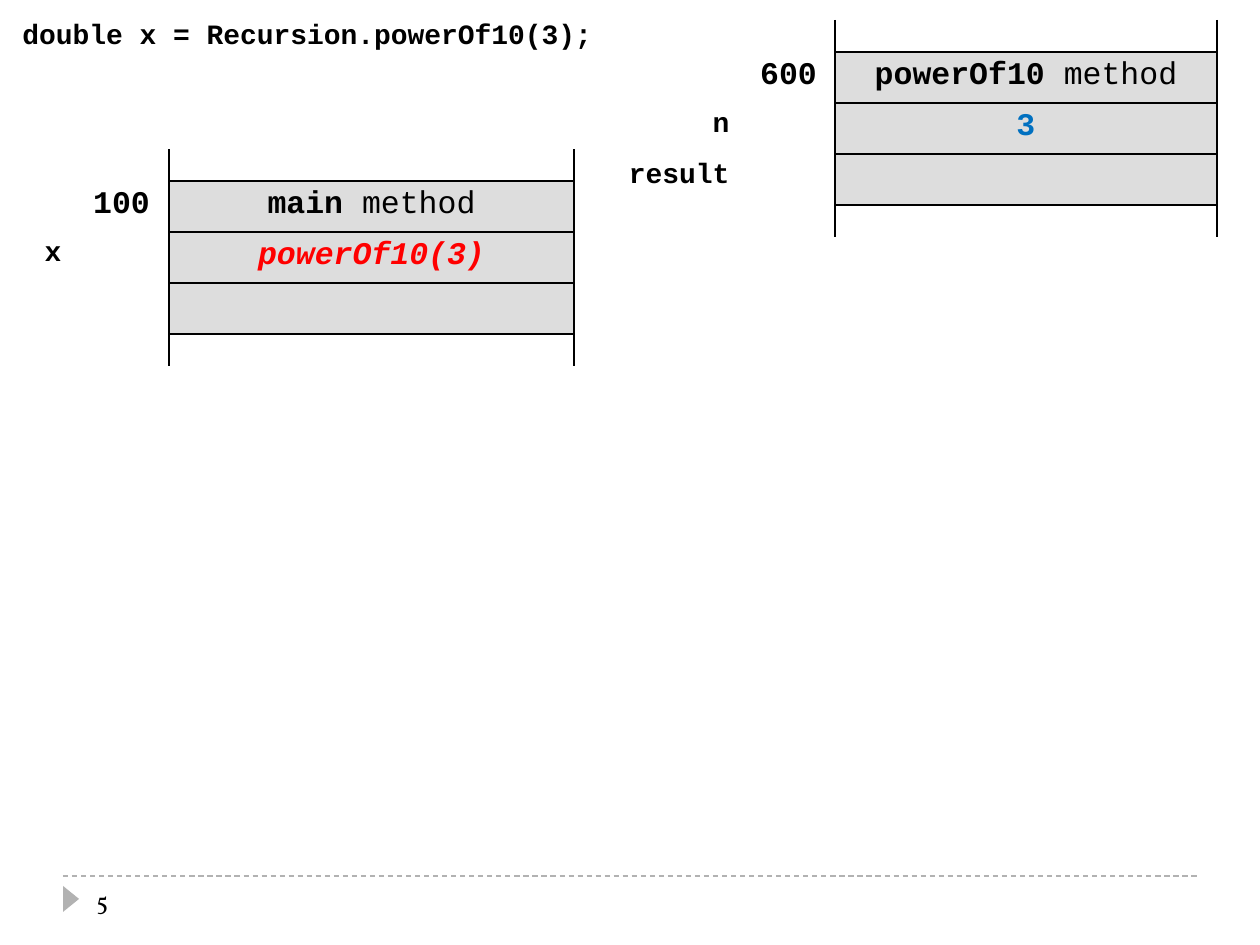
import pptx
import pptx.dml.color
import pptx.enum.dml
import pptx.enum.shapes
import pptx.enum.text
import pptx.oxml
import pptx.util
from pptx.oxml.ns import nsdecls, qn

RGBColor = pptx.dml.color.RGBColor
BLACK = RGBColor(0x00, 0x00, 0x00)
GRAY = RGBColor(0xB2, 0xB2, 0xB2)
FRAME_FILL = RGBColor(0xDD, 0xDD, 0xDD)
BLUE = RGBColor(0x00, 0x70, 0xC0)
RED = RGBColor(0xFF, 0x00, 0x00)
CODE_FONT = "Courier New"
NUMBER_FONT = "Vollkorn"
NO_GRID_STYLE = "{2D5ABB26-0587-4C30-8999-92F81FD0307C}"
PX = 914400 // 126
CENTER = pptx.enum.text.PP_ALIGN.CENTER
RIGHT = pptx.enum.text.PP_ALIGN.RIGHT


class SlideBuilder:
    """Draws styled elements on the current slide, with lengths in px."""

    def __init__(self, slide):
        self.slide = slide

    def box(self, left, top, width, height):
        return [length * PX for length in (left, top, width, height)]

    def style(self, paragraph, size, font=CODE_FONT, color=BLACK, bold=True, italic=False):
        paragraph.font.size = pptx.util.Pt(size)
        paragraph.font.name = font
        paragraph.font.color.rgb = color
        paragraph.font.bold = bold
        paragraph.font.italic = italic

    def text(self, content, place, size, wrap=True, **look):
        frame = self.slide.shapes.add_textbox(*self.box(*place)).text_frame
        frame.word_wrap = wrap
        frame.vertical_anchor = pptx.enum.text.MSO_ANCHOR.MIDDLE
        frame.text = content
        self.style(frame.paragraphs[0], size, **look)

    def dashed_rule(self, left, right, y):
        rule = self.slide.shapes.add_connector(
            pptx.enum.shapes.MSO_CONNECTOR.STRAIGHT, left * PX, y * PX, right * PX, y * PX)
        rule.line.color.rgb = GRAY
        rule.line.width = pptx.util.Pt(0.75)
        rule.line.dash_style = pptx.enum.dml.MSO_LINE.DASH
        rule._element.spPr.append(pptx.oxml.parse_xml(f"<a:effectLst {nsdecls('a')}/>"))

    def marker(self, place):
        triangle = self.slide.shapes.add_shape(
            pptx.enum.shapes.MSO_SHAPE.ISOSCELES_TRIANGLE, *self.box(*place))
        triangle.rotation = 90
        triangle.shadow.inherit = False
        triangle.fill.solid()
        triangle.fill.fore_color.rgb = GRAY
        triangle.line.fill.background()

    def borders(self, cell, sides):
        properties = cell._tc.get_or_add_tcPr()
        for position, side in enumerate(sides):
            properties.insert(position, pptx.oxml.parse_xml(
                f'<a:ln{side} {nsdecls("a")} w="12700"><a:solidFill>'
                f'<a:srgbClr val="{BLACK}"/></a:solidFill></a:ln{side}>'))

    def cell_text(self, cell, content, size, align=CENTER, **look):
        paragraph = cell.text_frame.paragraphs[0]
        paragraph.text = content
        paragraph.alignment = align
        self.style(paragraph, size, **look)
        return paragraph

    def memory_frame(self, left, top, columns, address, method, variables):
        """Variables are (name, value, color, italic) rows below the method row."""
        heights = [32, 51, 51, 51, 32]
        place = self.box(left, top, sum(columns), sum(heights))
        table = self.slide.shapes.add_table(len(heights), len(columns), *place).table
        table.first_row = table.horz_banding = False
        table._tbl.tblPr.find(qn("a:tableStyleId")).text = NO_GRID_STYLE
        for column, width in zip(table.columns, columns):
            column.width = width * PX
        for row, height in zip(table.rows, heights):
            row.height = height * PX
        for cell in table.iter_cells():
            cell.fill.background()
            self.cell_text(cell, "", 8)

        for row, sides in enumerate(["LRB", "LRTB", "LRTB", "LRTB", "LRT"]):
            self.borders(table.cell(row, 1), "R")
            memory = table.cell(row, 2)
            if 0 < row < 4:
                memory.fill.solid()
                memory.fill.fore_color.rgb = FRAME_FILL
            self.borders(memory, sides)

        self.cell_text(table.cell(1, 1), address, 18)
        heading = self.cell_text(table.cell(1, 2), "", 18, bold=None)
        for content, bold in ((method + " ", True), ("method", False)):
            run = heading.add_run()
            run.text = content
            run.font.bold = bold
        for row, (name, value, color, italic) in enumerate(variables, 2):
            if name:
                self.cell_text(table.cell(row, 0), name, 16, RIGHT)
            if value:
                self.cell_text(table.cell(row, 2), value, 18, color=color, italic=italic)


def main():
    presentation = pptx.Presentation()
    presentation.slide_width = 1260 * PX
    presentation.slide_height = 945 * PX
    builder = SlideBuilder(presentation.slides.add_slide(presentation.slide_layouts[6]))

    builder.dashed_rule(63, 1197, 876)
    builder.marker((58, 891, 26, 16))
    builder.text("5", (84, 876, 273, 50), 14, font=NUMBER_FONT, bold=False)
    builder.memory_frame(595, 20, [147, 93, 382], "600", "powerOf10",
                         [("n", "3", BLUE, False), ("result", "", BLACK, False)])
    builder.memory_frame(8, 149, [66, 95, 405], "100", "main",
                         [("x", "powerOf10(3)", RED, True)])
    builder.text("double x = Recursion.powerOf10(3);", (10, 10, 604, 47), 16, wrap=False)
    presentation.save("out.pptx")


if __name__ == "__main__":
    main()
